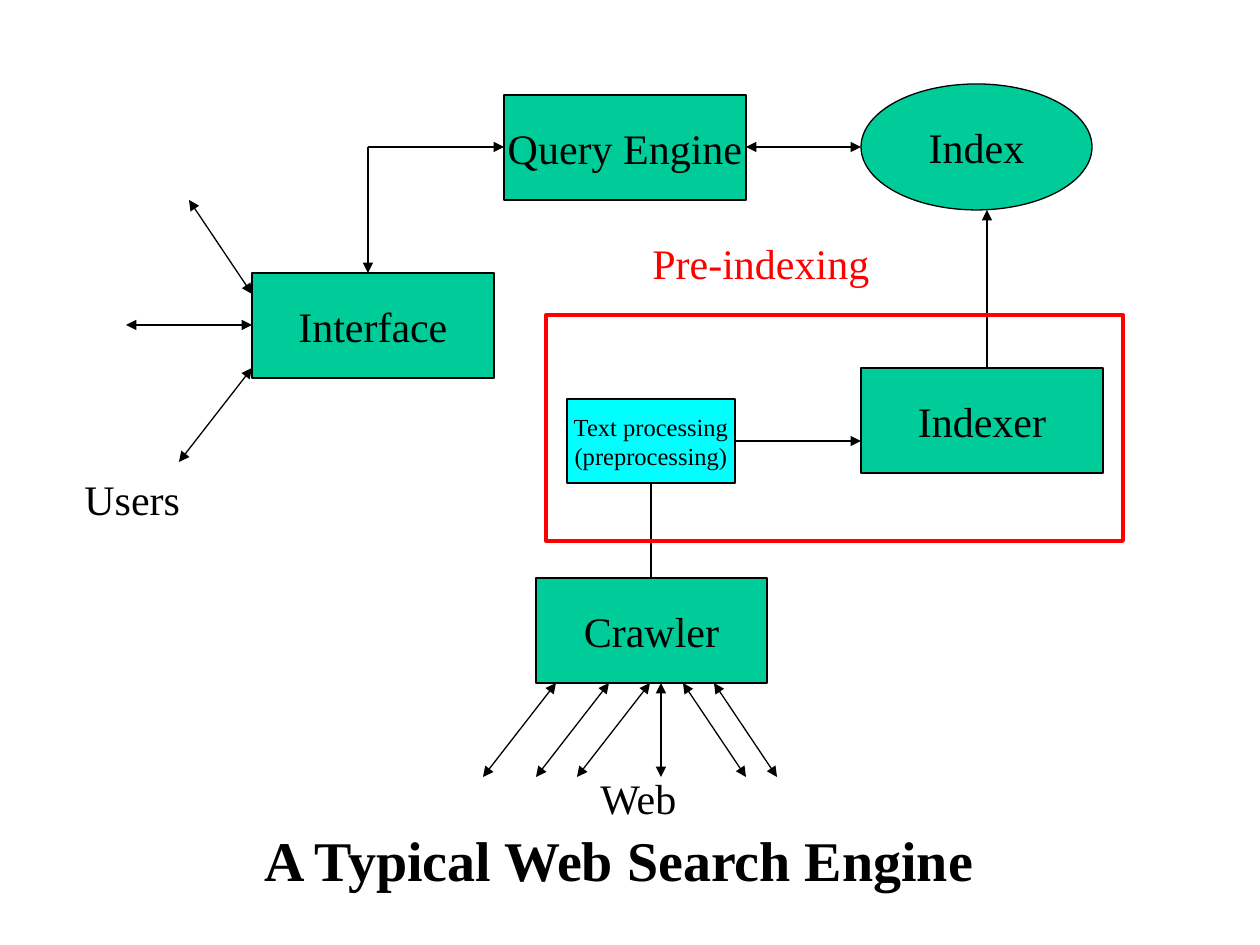
"""Draw a block diagram of a typical web search engine."""
from dataclasses import dataclass

import pptx
import pptx.dml.color
import pptx.enum.shapes
import pptx.enum.text
import pptx.oxml
import pptx.oxml.ns
import pptx.util

PX_PER_INCH = 126
FONT = "Times New Roman"
GREEN, CYAN, RED, BLACK = "00CC99", "00FFFF", "FF0000", "000000"
RECT = pptx.enum.shapes.MSO_SHAPE.RECTANGLE
OVAL = pptx.enum.shapes.MSO_SHAPE.OVAL
CENTER = pptx.enum.text.PP_ALIGN.CENTER
LEFT = pptx.enum.text.PP_ALIGN.LEFT


@dataclass
class Block:
    x: int
    y: int
    w: int
    h: int
    text: str = ""
    fill: str | None = GREEN
    size: int = 24
    shape: int = RECT
    line: str = BLACK
    weight: float = 0.75


@dataclass
class Label:
    x: int
    y: int
    w: int
    h: int
    text: str
    size: int = 24
    color: str = BLACK
    bold: bool = False


@dataclass
class Link:
    x1: int
    y1: int
    x2: int
    y2: int
    head: bool = False
    tail: bool = True


BLOCKS = [
    Block(252, 273, 242, 105, "Interface"),
    Block(504, 95, 242, 105, "Query Engine"),
    Block(861, 368, 242, 105, "Indexer"),
    Block(861, 84, 231, 126, "Index", shape=OVAL),
    Block(536, 578, 231, 105, "Crawler"),
]
PREPROCESSING = [
    Block(567, 399, 168, 84, "Text processing\n(preprocessing)", CYAN, 14),
    Block(546, 315, 577, 226, fill=None, line=RED, weight=2.25),
]
CRAWLS = [(556, -73), (714, 63), (609, -73), (650, -73), (683, 63), (661, 0)]
LINKS = [Link(x, 683, x + dx, 777, head=True) for x, dx in CRAWLS] + [
    Link(651, 578, 651, 441, tail=False),
    Link(651, 441, 861, 441),
    Link(987, 368, 987, 210),
    Link(746, 147, 861, 147, head=True),
    Link(368, 147, 504, 147),
    Link(368, 147, 368, 273),
    Link(252, 368, 179, 462, head=True),
    Link(189, 200, 252, 294, head=True),
    Link(252, 325, 126, 325, head=True),
]
LABELS = [
    Label(72, 467, 121, 63, "Users"),
    Label(588, 766, 105, 63, "Web"),
    Label(252, 819, 747, 79, "A Typical Web Search Engine", 32, bold=True),
    Label(640, 231, 244, 64, "Pre-indexing", color=RED),
]


def px(*lengths: int) -> list[int]:
    """Turn pixels into EMU."""
    return [round(n * pptx.util.Inches(1) / PX_PER_INCH) for n in lengths]


def rgb(value: str) -> pptx.dml.color.RGBColor:
    """Turn a hex string into a colour."""
    return pptx.dml.color.RGBColor.from_string(value)


def write(tf, text: str, *, size: int, color: str = BLACK,
          bold: bool = False, align=LEFT) -> None:
    """Fill a text frame, one paragraph for each line of text."""
    tf.word_wrap = False
    for i, line in enumerate(text.split("\n")):
        p = tf.add_paragraph() if i else tf.paragraphs[0]
        p.alignment = align
        r = p.add_run()
        r.text = line
        r.font.name = FONT
        r.font.size = pptx.util.Pt(size)
        r.font.bold = bold
        r.font.color.rgb = rgb(color)


def draw_block(s, block: Block) -> None:
    """Draw a shape with centred text."""
    sp = s.shapes.add_shape(block.shape, *px(block.x, block.y, block.w, block.h))
    sp.shadow.inherit = False
    if block.fill:
        sp.fill.solid()
        sp.fill.fore_color.rgb = rgb(block.fill)
    else:
        sp.fill.background()
    sp.line.color.rgb = rgb(block.line)
    sp.line.width = pptx.util.Pt(block.weight)
    if block.text:
        sp.text_frame.vertical_anchor = pptx.enum.text.MSO_ANCHOR.MIDDLE
        write(sp.text_frame, block.text, size=block.size, align=CENTER)


def draw_link(s, link: Link) -> None:
    """Draw a straight line with arrowheads at the chosen ends."""
    cxn = s.shapes.add_connector(
        pptx.enum.shapes.MSO_CONNECTOR.STRAIGHT,
        *px(link.x1, link.y1, link.x2, link.y2))
    cxn.line.color.rgb = rgb(BLACK)
    cxn.line.width = pptx.util.Pt(0.75)
    ln = cxn.line._get_or_add_ln()
    for tag, shown in (("a:headEnd", link.head), ("a:tailEnd", link.tail)):
        if shown:
            end = pptx.oxml.parse_xml(
                f'<{tag} {pptx.oxml.ns.nsdecls("a")} type="triangle"/>')
            ln.append(end)
    cxn._element.spPr.append(pptx.oxml.parse_xml(
        f'<a:effectLst {pptx.oxml.ns.nsdecls("a")}/>'))


def draw_label(s, label: Label) -> None:
    """Draw a text box that fits its text."""
    tb = s.shapes.add_textbox(*px(label.x, label.y, label.w, label.h))
    tb.text_frame.auto_size = pptx.enum.text.MSO_AUTO_SIZE.SHAPE_TO_FIT_TEXT
    write(tb.text_frame, label.text, size=label.size, color=label.color,
          bold=label.bold)


def main() -> None:
    """Build and save the slide."""
    prs = pptx.Presentation()
    prs.slide_width, prs.slide_height = px(1260, 945)
    s = prs.slides.add_slide(prs.slide_layouts[6])
    for block in BLOCKS:
        draw_block(s, block)
    for link in LINKS:
        draw_link(s, link)
    for block in PREPROCESSING:
        draw_block(s, block)
    for label in LABELS:
        draw_label(s, label)
    prs.save("out.pptx")


if __name__ == "__main__":
    main()
